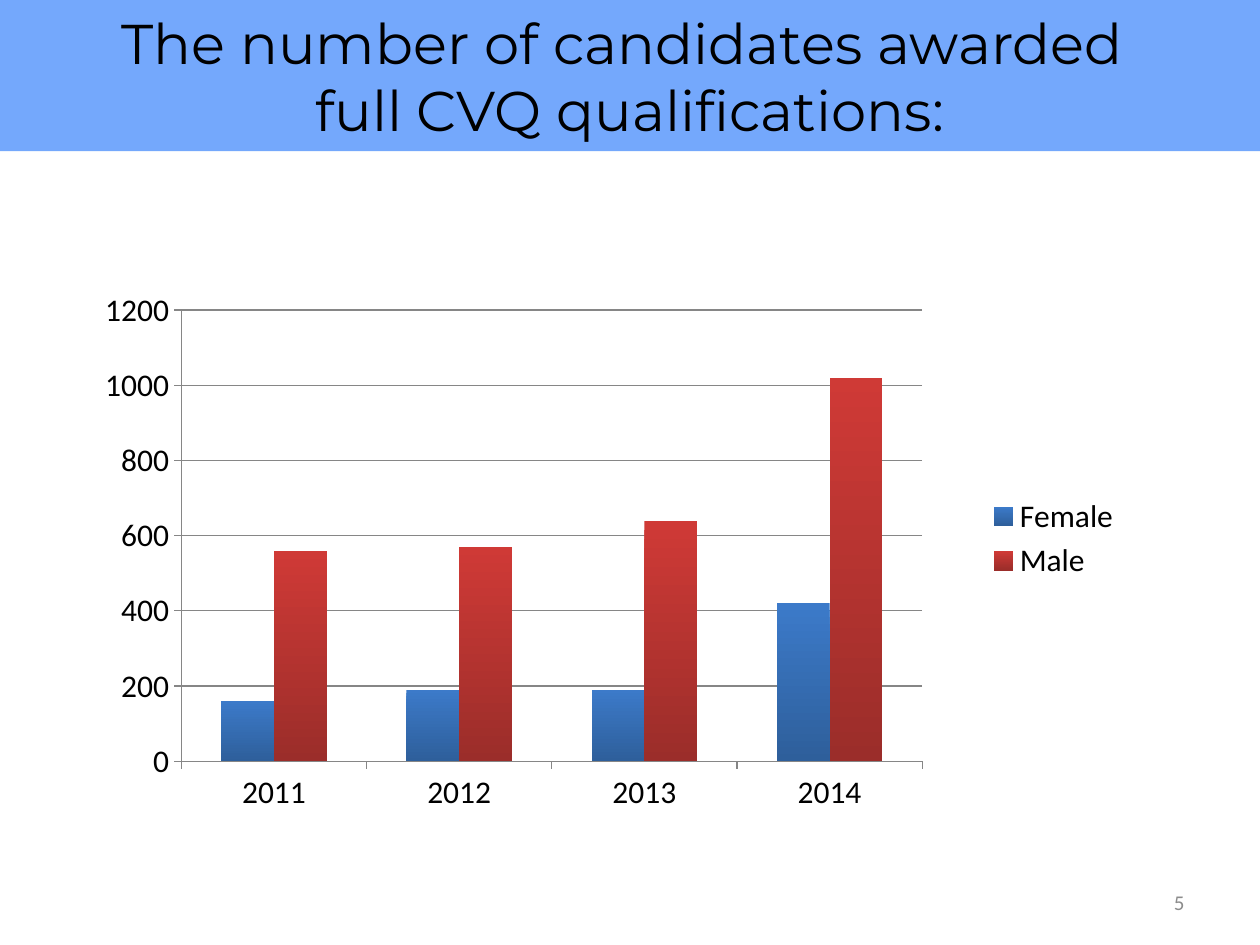
from lxml import etree
from pptx import Presentation
from pptx.chart.data import CategoryChartData
from pptx.dml.color import RGBColor
from pptx.enum.chart import XL_CHART_TYPE, XL_LEGEND_POSITION, XL_TICK_MARK
from pptx.enum.shapes import MSO_SHAPE
from pptx.enum.text import MSO_ANCHOR, PP_ALIGN
from pptx.oxml.ns import qn
from pptx.util import Inches, Pt

CLUSTERED = XL_CHART_TYPE.COLUMN_CLUSTERED
LEGEND_RIGHT = XL_LEGEND_POSITION.RIGHT
TICK_OUT, TICK_NONE = XL_TICK_MARK.OUTSIDE, XL_TICK_MARK.NONE
RECTANGLE = MSO_SHAPE.RECTANGLE
MIDDLE = MSO_ANCHOR.MIDDLE
CENTER, RIGHT = PP_ALIGN.CENTER, PP_ALIGN.RIGHT

WIDTH, HEIGHT = Inches(10), Inches(7.5)
COLORS = {
    "banner": "74A8FC",
    "text": "000000",
    "muted": "8C8C8C",
    "axis": "868686",
    "Female": ("3C7AC9", "2E5F9B"),
    "Male": ("CF3A36", "9B2D2A"),
}
YEARS = ["2011", "2012", "2013", "2014"]
AWARDS = {"Female": [160, 190, 190, 420], "Male": [560, 570, 640, 1020]}
PLOT_AREA = {"x": 0.1, "y": 0.11, "w": 0.7, "h": 0.77}


def rgb(value):
    """Turn a hex string into a colour."""
    return RGBColor.from_string(value)


class SlideBuilder:
    """Hold the style and the current slide; boxes are shares of its size."""

    heading_font = "Montserrat"
    body_font = "Calibri"

    def __init__(self, slide):
        self.slide = slide

    def place(self, left, top, width, height):
        """Convert shares of the slide into lengths."""
        return (round(left * WIDTH), round(top * HEIGHT),
                round(width * WIDTH), round(height * HEIGHT))

    def set_text(self, shape, text, font, size, color, align):
        """Put one styled paragraph into a shape."""
        frame = shape.text_frame
        frame.word_wrap = True
        frame.vertical_anchor = MIDDLE
        frame.text = text
        paragraph = frame.paragraphs[0]
        paragraph.alignment = align
        for run in paragraph.runs:
            self.style(run.font, font, size, color)

    def style(self, font, name, size, color):
        """Set the typeface, size and colour of a font."""
        font.name, font.size = name, Pt(size)
        font.color.rgb = rgb(COLORS[color])

    def banner(self, box, text):
        """Add the filled heading band."""
        band = self.slide.shapes.add_shape(RECTANGLE, *self.place(*box))
        band.shadow.inherit = False
        band.fill.solid()
        band.fill.fore_color.rgb = rgb(COLORS["banner"])
        band.line.fill.background()
        self.set_text(band, text, self.heading_font, 32, "text", CENTER)

    def page_number(self, box, text):
        """Add the slide number."""
        number = self.slide.shapes.add_textbox(*self.place(*box))
        self.set_text(number, text, self.body_font, 12, "muted", RIGHT)

    def columns(self, box, categories, series, plot_area):
        """Add a clustered column chart with gradient bars."""
        data = CategoryChartData()
        data.categories = categories
        for name, values in series.items():
            data.add_series(name, values)
        chart = self.slide.shapes.add_chart(
            CLUSTERED, *self.place(*box), data).chart
        self.style(chart.font, self.body_font, 18, "text")
        chart.has_title = False
        chart.has_legend = True
        chart.legend.position = LEGEND_RIGHT
        chart.legend.include_in_layout = False
        plot = chart.plots[0]
        plot.vary_by_categories = False
        plot.gap_width, plot.overlap = 150, 0
        for bars in plot.series:
            fill = bars.format.fill
            fill.gradient()
            fill.gradient_angle = 270
            for stop, color in zip(fill.gradient_stops, COLORS[bars.name]):
                stop.color.rgb = rgb(color)
        self.axes(chart)
        self.fix_plot_area(chart, plot_area)

    def axes(self, chart):
        """Style both axes and the value gridlines."""
        value_axis = chart.value_axis
        value_axis.minimum_scale, value_axis.maximum_scale = 0, 1200
        value_axis.major_unit = 200
        value_axis.has_major_gridlines = True
        for axis in (chart.category_axis, value_axis):
            axis.major_tick_mark, axis.minor_tick_mark = TICK_OUT, TICK_NONE
        for part in (chart.category_axis, value_axis, value_axis.major_gridlines):
            part.format.line.color.rgb = rgb(COLORS["axis"])
            part.format.line.width = Pt(0.75)

    def fix_plot_area(self, chart, shares):
        """Pin the inner plot area to shares of the chart."""
        area = chart._chartSpace.find(".//" + qn("c:plotArea"))
        for old in area.findall(qn("c:layout")):
            area.remove(old)
        layout = etree.Element(qn("c:layout"))
        manual = etree.SubElement(layout, qn("c:manualLayout"))
        settings = {"layoutTarget": "inner", "xMode": "edge", "yMode": "edge", **shares}
        for tag, value in settings.items():
            etree.SubElement(manual, qn("c:" + tag)).set("val", str(value))
        area.insert(0, layout)


def main():
    """Build and save the slide."""
    deck = Presentation()
    deck.slide_width, deck.slide_height = WIDTH, HEIGHT
    builder = SlideBuilder(deck.slides.add_slide(deck.slide_layouts[6]))
    builder.columns((0.06, 0.26, 0.84, 0.62), YEARS, AWARDS, PLOT_AREA)
    builder.page_number((0.72, 0.93, 0.23, 0.05), "5")
    builder.banner((0, 0, 1, 0.16),
                   "The number of candidates awarded \vfull CVQ qualifications:")
    deck.save("out.pptx")


if __name__ == "__main__":
    main()
